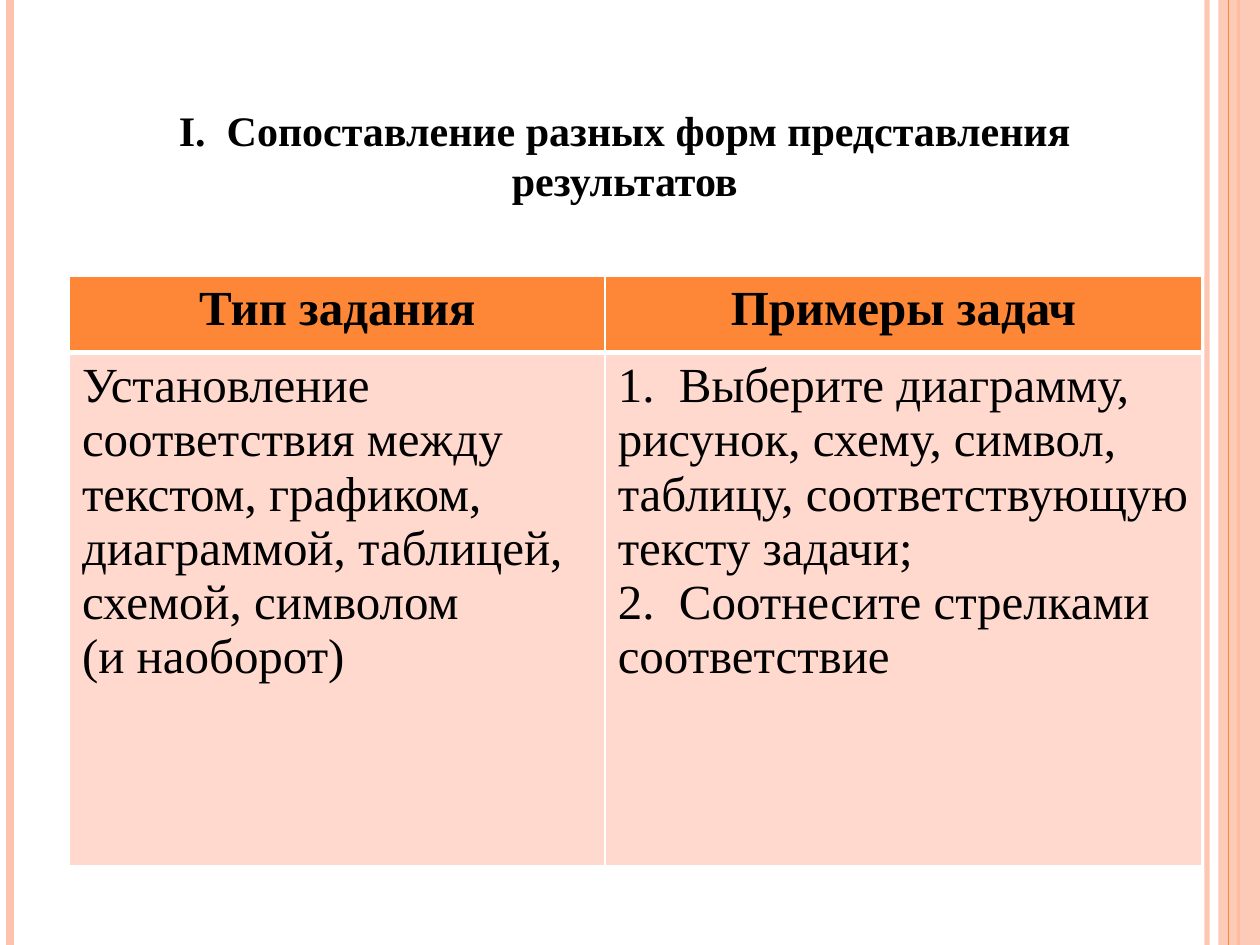
from dataclasses import dataclass

from lxml.etree import SubElement
from pptx import Presentation
from pptx.dml.color import RGBColor
from pptx.enum.shapes import MSO_CONNECTOR, MSO_SHAPE
from pptx.enum.text import MSO_ANCHOR, MSO_AUTO_SIZE, PP_ALIGN
from pptx.oxml.ns import qn
from pptx.util import Cm, Pt

COLORS = {
    "orange": "FE8637",
    "pink": "FEC3AE",
    "pale": "FFD9CE",
    "white": "FFFFFF",
    "black": "000000",
}
FONT = "Times New Roman"
WIDTH, HEIGHT = 25.4, 19.05
COLUMN_WIDTHS = (10.8, 12.02)
ROW_HEIGHTS = (1.55, 10.35)


@dataclass(frozen=True)
class Stripe:
    x: float
    weight: float
    color: str
    opacity: int = 100


@dataclass(frozen=True)
class TableRow:
    cells: tuple[str, ...]
    fill: str
    bold: bool
    align: PP_ALIGN
    top: float
    bottom: float


STRIPES_BEHIND_BAND = (
    Stripe(24.33, 3, "pink", 93),
    Stripe(0.2, 4.5, "pink"),
    Stripe(24.97, 1.5, "orange"),
)
STRIPE_ON_BAND = Stripe(24.77, 0.75, "orange")

TITLE = "I.  Сопоставление разных форм представления результатов"
ROWS = (
    TableRow(("Тип задания", "Примеры задач"),
             "orange", True, PP_ALIGN.CENTER, 1, 3),
    TableRow(
        (
            "Установление соответствия между текстом, графиком, диаграммой, "
            "таблицей, схемой, символом \v(и наоборот)",
            "1.  Выберите диаграмму, рисунок, схему, символ, таблицу, "
            "соответствующую тексту задачи;\n"
            "2.  Соотнесите стрелками соответствие",
        ),
        "pale", False, PP_ALIGN.LEFT, 3, 1),
)


def rgb(name: str) -> RGBColor:
    return RGBColor.from_string(COLORS[name])


def set_opacity(properties, percent: int) -> None:
    color = next(properties.iter(qn("a:srgbClr")))
    SubElement(color, qn("a:alpha"), val=str(percent * 1000))


def write_text(frame, text: str, *, size: float, bold: bool = False,
               align: PP_ALIGN = PP_ALIGN.LEFT, color: str = "black") -> None:
    """Fill a frame: a newline starts a paragraph, a vertical tab breaks a line."""
    frame.text = text
    for para in frame.paragraphs:
        para.alignment = align
        for span in para.runs:
            span.font.name = FONT
            span.font.size = Pt(size)
            span.font.bold = bold
            span.font.color.rgb = rgb(color)


def draw_stripe(page, stripe: Stripe) -> None:
    line = page.shapes.add_connector(
        MSO_CONNECTOR.STRAIGHT, Cm(stripe.x), 0, Cm(stripe.x), Cm(HEIGHT))
    line.line.width = Pt(stripe.weight)
    line.line.color.rgb = rgb(stripe.color)
    properties = line._element.spPr
    if stripe.opacity < 100:
        set_opacity(properties, stripe.opacity)
    SubElement(properties, qn("a:effectLst"))


def draw_band(page) -> None:
    band = page.shapes.add_shape(
        MSO_SHAPE.RECTANGLE, Cm(24.56), 0, Cm(WIDTH - 24.56), Cm(HEIGHT))
    band.shadow.inherit = False
    band.fill.solid()
    band.fill.fore_color.rgb = rgb("pink")
    set_opacity(band._element.spPr, 87)
    band.line.fill.background()


def set_borders(cell, top: float, bottom: float) -> None:
    properties = cell._tc.get_or_add_tcPr()
    weights = {"lnL": 1, "lnR": 1, "lnT": top, "lnB": bottom}
    for side, weight in weights.items():
        border = SubElement(properties, qn(f"a:{side}"), w=str(Pt(weight)))
        fill = SubElement(border, qn("a:solidFill"))
        SubElement(fill, qn("a:srgbClr"), val=COLORS["white"])


def draw_table(page) -> None:
    table = page.shapes.add_table(
        len(ROWS), len(COLUMN_WIDTHS), Cm(1.4), Cm(5.56),
        Cm(sum(COLUMN_WIDTHS)), Cm(sum(ROW_HEIGHTS))).table
    table.horz_banding = False
    for column, width in zip(table.columns, COLUMN_WIDTHS):
        column.width = Cm(width)
    for table_row, height, row in zip(table.rows, ROW_HEIGHTS, ROWS):
        table_row.height = Cm(height)
        for cell, text in zip(table_row.cells, row.cells):
            write_text(cell.text_frame, text, size=28,
                       bold=row.bold, align=row.align)
            set_borders(cell, row.top, row.bottom)
            cell.fill.solid()
            cell.fill.fore_color.rgb = rgb(row.fill)


def place_title(page) -> None:
    title = page.shapes.title
    title.left, title.top = Cm(1.19), Cm(1.98)
    title.width, title.height = Cm(22.81), Cm(2.31)
    frame = title.text_frame
    write_text(frame, TITLE, size=24, bold=True, align=PP_ALIGN.CENTER)
    frame.word_wrap = True
    frame.auto_size = MSO_AUTO_SIZE.SHAPE_TO_FIT_TEXT
    frame.vertical_anchor = MSO_ANCHOR.TOP


def main() -> None:
    deck = Presentation()
    deck.slide_width, deck.slide_height = Cm(WIDTH), Cm(HEIGHT)
    page = deck.slides.add_slide(deck.slide_layouts[5])
    page.background.fill.solid()
    page.background.fill.fore_color.rgb = rgb("white")
    for stripe in STRIPES_BEHIND_BAND:
        draw_stripe(page, stripe)
    draw_band(page)
    draw_stripe(page, STRIPE_ON_BAND)
    draw_table(page)
    place_title(page)
    deck.save("out.pptx")


if __name__ == "__main__":
    main()
